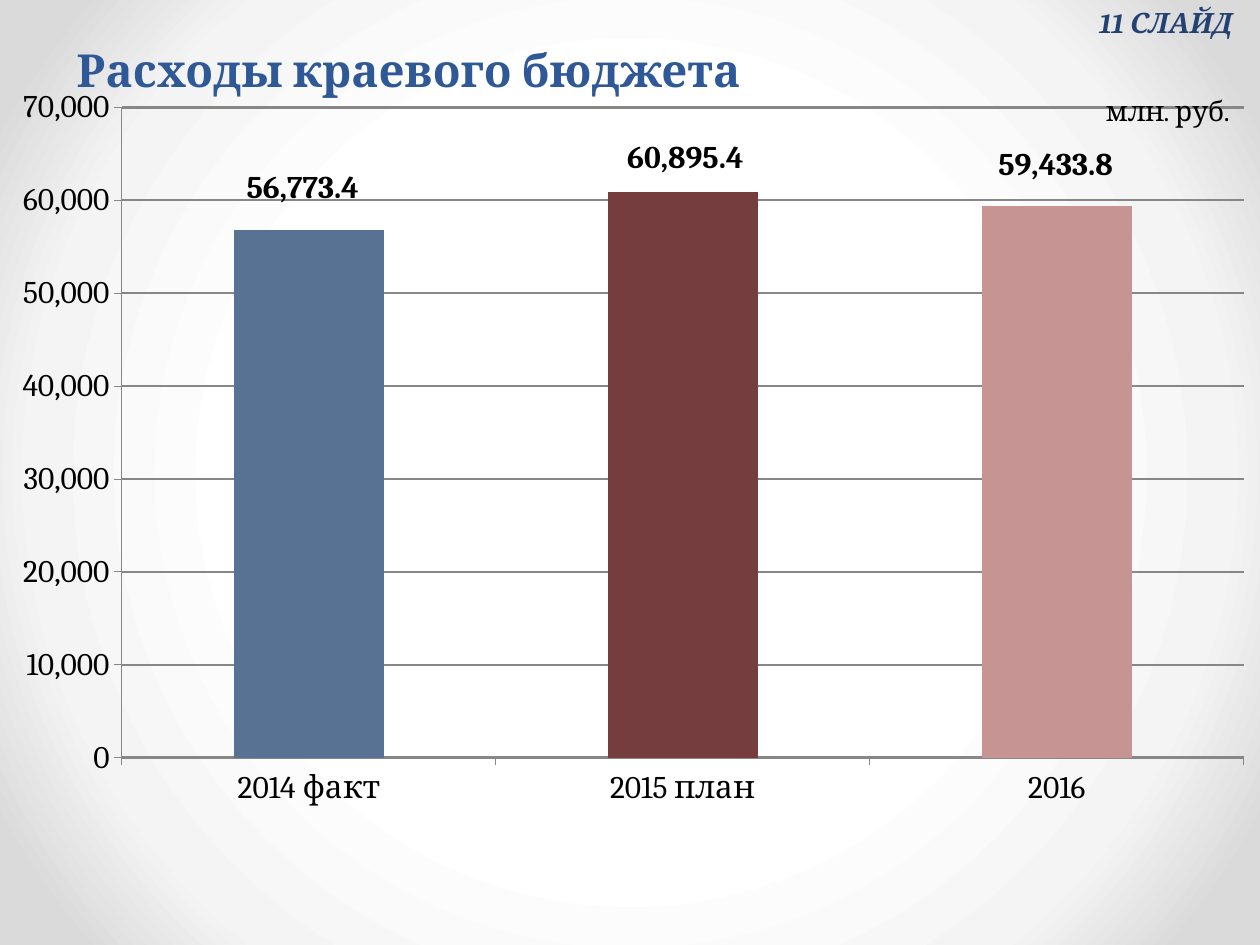
from dataclasses import dataclass

from lxml import etree
from pptx import Presentation
from pptx import util as u
from pptx.chart.data import CategoryChartData
from pptx.dml.color import RGBColor
from pptx.enum import chart as charts, text
from pptx.oxml import parse_xml
from pptx.oxml.ns import nsdecls, qn

EMU_PER_PX = 914400 / 126


@dataclass(frozen=True)
class Theme:
    font: str = "Cambria"
    heading: str = "2F5897"
    marker: str = "234271"
    ink: str = "000000"
    grid: str = "878787"
    heading_size: int = 26
    heading_leading: int = 58
    note_size: int = 16
    chart_size: int = 18
    backdrop: tuple = ((50, "FFFFFF"), (76, "F4F4F4"), (92, "DADADA"))


THEME = Theme()

# category, value, bar colour, label shift as fractions of the chart's size
EXPENSES = (
    ("2014 факт", 56773.4, "577293", (-0.005, -0.356)),
    ("2015 план", 60895.4, "753D3D", (0.002, -0.369)),
    ("2016", 59433.8, "C79494", (-0.001, -0.369)),
)
VALUE_FORMAT = "#,##0.0"


def px(length):
    return u.Emu(round(length * EMU_PER_PX))


def place(shape, left, top, width, height):
    shape.left, shape.top = px(left), px(top)
    shape.width, shape.height = px(width), px(height)


def style_font(font, size, color, bold=False, italic=False):
    font.name, font.size = THEME.font, u.Pt(size)
    font.bold, font.italic = bold, italic
    font.color.rgb = RGBColor.from_string(color)


def paint_backdrop(page):
    """Radial gradient that darkens towards the edges."""
    page.background.fill.gradient()
    stops = "".join(
        f'<a:gs pos="{percent * 1000}"><a:srgbClr val="{color}"/></a:gs>'
        for percent, color in THEME.backdrop)
    radial = parse_xml(
        f'<a:gradFill {nsdecls("a")} rotWithShape="1"><a:gsLst>{stops}</a:gsLst>'
        '<a:path path="circle">'
        '<a:fillToRect l="50000" t="50000" r="50000" b="50000"/>'
        '</a:path></a:gradFill>')
    linear = page.background._cSld.find(".//" + qn("a:gradFill"))
    linear.getparent().replace(linear, radial)


def set_heading(page):
    heading = page.shapes.title
    place(heading, 64, 45, 1134, 159)
    frame = heading.text_frame
    frame.word_wrap = True
    frame.auto_size = text.MSO_AUTO_SIZE.NONE
    frame.vertical_anchor = text.MSO_ANCHOR.BOTTOM
    para = frame.paragraphs[0]
    para.alignment = text.PP_ALIGN.LEFT
    para.line_spacing = u.Pt(THEME.heading_leading)
    span = para.add_run()
    span.text = "Расходы краевого бюджета"
    style_font(span.font, THEME.heading_size, THEME.heading, bold=True)
    para.add_line_break()
    style_font(para.font, THEME.heading_size, THEME.heading, bold=True)


def add_slide_marker(page):
    box = page.shapes.add_textbox(px(1075), px(-1), px(185), px(47))
    frame = box.text_frame
    frame.word_wrap = True
    frame.margin_right = px(28)
    para = frame.paragraphs[0]
    para.alignment = text.PP_ALIGN.RIGHT
    span = para.add_run()
    span.text = "11 СЛАЙД"
    style_font(span.font, THEME.note_size, THEME.marker, bold=True, italic=True)


def set_layout(parent, index, **settings):
    """Give a chart part a manual layout as its child at the index."""
    for old in parent.findall(qn("c:layout")):
        parent.remove(old)
    layout = etree.Element(qn("c:layout"))
    manual = etree.SubElement(layout, qn("c:manualLayout"))
    for name, value in settings.items():
        etree.SubElement(manual, qn(f"c:{name}")).set("val", str(value))
    parent.insert(index, layout)


def style_line(line, width):
    line.color.rgb = RGBColor.from_string(THEME.grid)
    line.width = u.Pt(width)


def set_unit_title(chart):
    chart.has_title = True
    title = chart.chart_title
    span = title.text_frame.paragraphs[0].add_run()
    span.text = "млн. руб."
    style_font(span.font, THEME.note_size, THEME.ink)
    element = title._element
    set_layout(element, 1, xMode="edge", yMode="edge", x=0.885, y=0.002)
    element.find(qn("c:overlay")).set("val", "1")


def style_axes(chart):
    values = chart.value_axis
    values.minimum_scale, values.maximum_scale = 0, 70000
    values.major_unit = 10000
    values.has_major_gridlines = True
    style_line(values.major_gridlines.format.line, 1.25)
    values.tick_labels.number_format = "#,##0"
    values.tick_labels.number_format_is_linked = False
    for axis in (values, chart.category_axis):
        axis.major_tick_mark = charts.XL_TICK_MARK.OUTSIDE
        style_line(axis.format.line, 0.5)
        style_font(axis.tick_labels.font, THEME.chart_size, THEME.ink)


def style_labels(labels):
    labels.show_value = True
    labels.number_format = VALUE_FORMAT
    labels.number_format_is_linked = False
    style_font(labels.font, THEME.chart_size, THEME.ink, bold=True)
    for leader in labels._element.findall(qn("c:showLeaderLines")):
        leader.set("val", "0")


def style_bar(point, color, shift):
    point.format.fill.solid()
    point.format.fill.fore_color.rgb = RGBColor.from_string(color)
    label = point.data_label
    style_font(label.font, THEME.chart_size, THEME.ink, bold=True)
    element = label._dLbl
    set_layout(element, 1, x=shift[0], y=shift[1])
    number = etree.Element(qn("c:numFmt"), formatCode=VALUE_FORMAT, sourceLinked="0")
    element.insert(2, number)


def add_expense_chart(page):
    data = CategoryChartData(number_format=VALUE_FORMAT)
    data.categories = [row[0] for row in EXPENSES]
    data.add_series("Series 1", [row[1] for row in EXPENSES])
    chart = page.shapes.add_chart(
        charts.XL_CHART_TYPE.COLUMN_STACKED,
        px(0), px(86), px(1245), px(859), data).chart
    style_font(chart.font, THEME.chart_size, THEME.ink)
    chart.has_legend = False
    set_unit_title(chart)
    style_axes(chart)

    plot = chart.plots[0]
    plot.gap_width, plot.overlap = 150, 100
    plot.vary_by_categories = False
    series = plot.series[0]
    series.format.fill.solid()
    series.format.fill.fore_color.rgb = RGBColor.from_string(EXPENSES[0][2])
    style_labels(series.data_labels)
    for index, (_, _, color, shift) in enumerate(EXPENSES):
        style_bar(series.points[index], color, shift)

    area = chart._chartSpace.find(".//" + qn("c:plotArea"))
    set_layout(area, 0, layoutTarget="inner", xMode="edge", yMode="edge",
               x=0.098, y=0.025, w=0.902, h=0.757)


def main():
    deck = Presentation()
    deck.slide_width, deck.slide_height = px(1260), px(945)
    page = deck.slides.add_slide(deck.slide_layouts.get_by_name("Title Only"))
    paint_backdrop(page)
    set_heading(page)
    add_expense_chart(page)
    add_slide_marker(page)
    deck.save("out.pptx")


if __name__ == "__main__":
    main()
